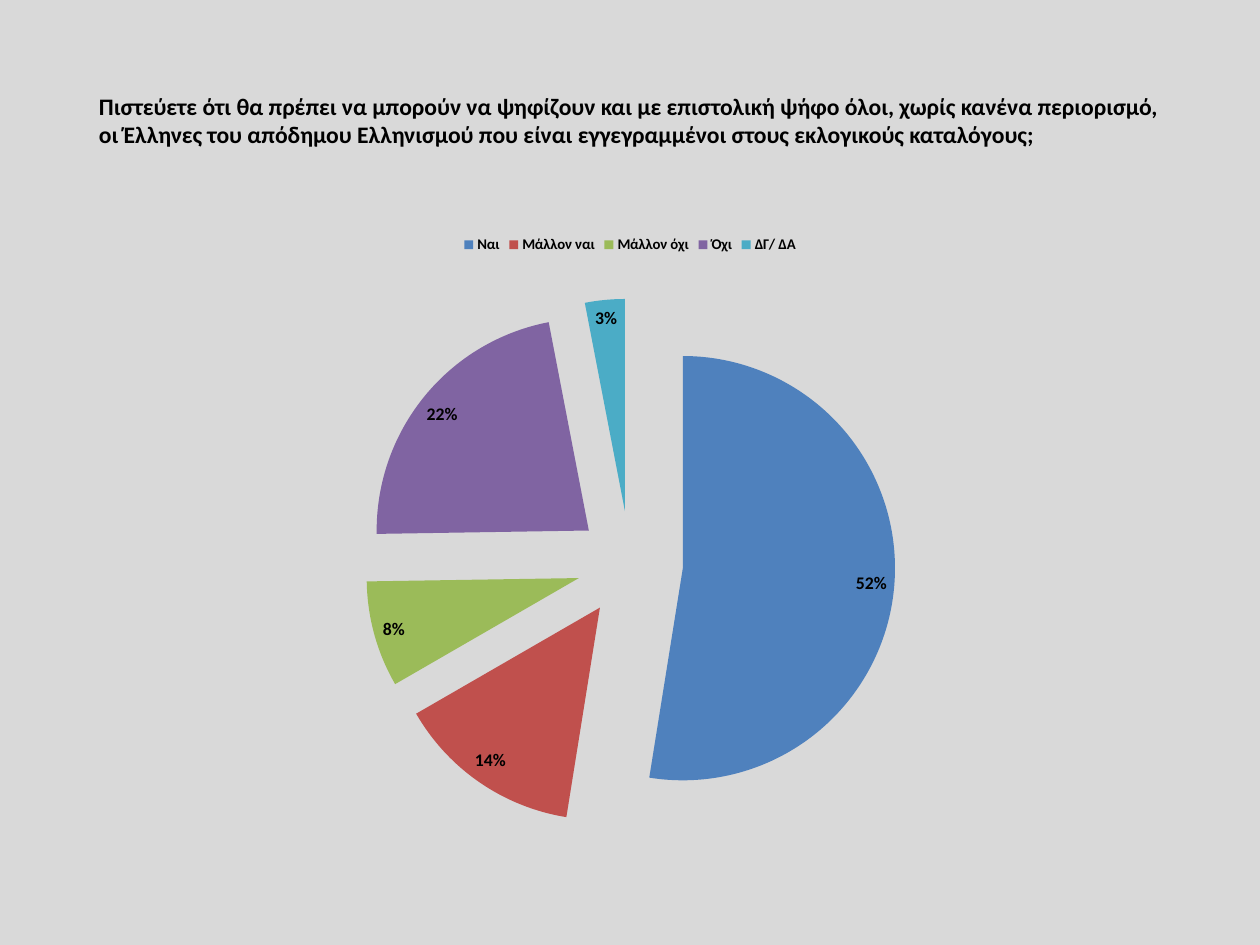
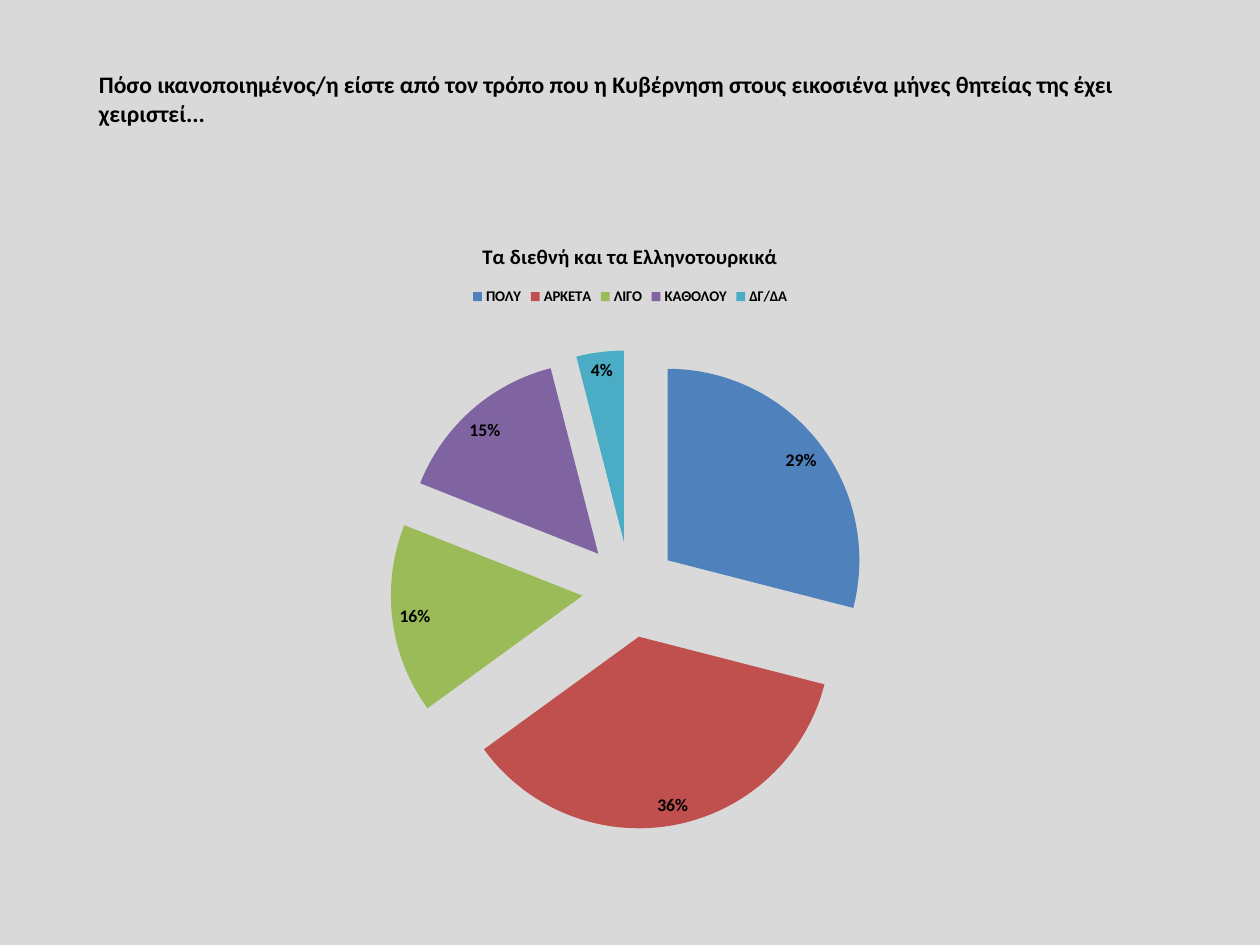
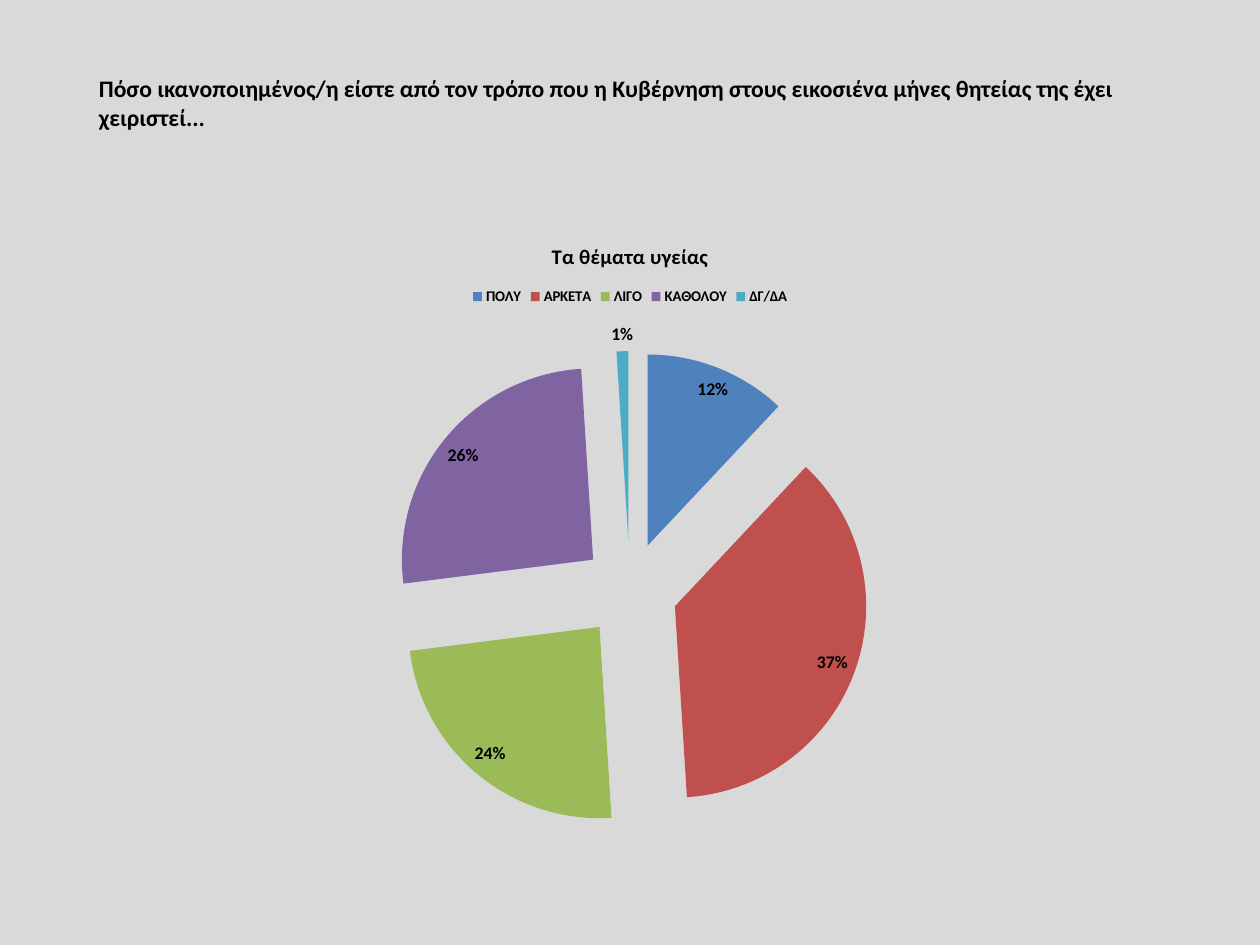
from lxml import etree
from pptx import Presentation
from pptx.chart.data import CategoryChartData
from pptx.dml.color import RGBColor
from pptx.enum.chart import XL_CHART_TYPE, XL_LABEL_POSITION, XL_LEGEND_POSITION
from pptx.enum.text import MSO_ANCHOR
from pptx.oxml.ns import qn
from pptx.util import Inches, Pt

PIE = XL_CHART_TYPE.PIE
BEST_FIT = XL_LABEL_POSITION.BEST_FIT
TOP = XL_LEGEND_POSITION.TOP
MIDDLE = MSO_ANCHOR.MIDDLE

# Shared look
SLIDE_SIZE = (11.84, 8.88)
BACKGROUND = "D9D9D9"
INK = "000000"
FONT = "Calibri"
SLICES = ["4F81BD", "C0504D", "9BBB59", "8064A2", "4BACC6"]
EXPLOSION = 25
QUESTION_INSETS = {
    "margin_left": 0.12, "margin_right": 0.12,
    "margin_top": 0.06, "margin_bottom": 0.06,
}

# Poll content
HANDLING = ("Πόσο ικανοποιημένος/η είστε από τον τρόπο που η Κυβέρνηση στους "
            "εικοσιένα μήνες θητείας της έχει χειριστεί...")
POSTAL_VOTE = ("Πιστεύετε ότι θα πρέπει να μπορούν να ψηφίζουν και με επιστολική "
               "ψήφο όλοι, χωρίς κανένα περιορισμό, οι Έλληνες του απόδημου "
               "Ελληνισμού που είναι εγγεγραμμένοι στους εκλογικούς καταλόγους;")
AGREEMENT = ["Ναι", "Μάλλον ναι", "Μάλλον όχι", "Όχι", "ΔΓ/ ΔΑ"]
SATISFACTION = ["ΠΟΛΥ", "ΑΡΚΕΤΑ", "ΛΙΓΟ", "ΚΑΘΟΛΟΥ", "ΔΓ/ΔΑ"]
QUESTION_LEFT, QUESTION_TOP, QUESTION_WIDTH = 0.81, 0.47, 10.21
CHART_LEFT, CHART_WIDTH, CHART_BOTTOM = 0.59, 10.66, 7.93

POLLS = [
    {"question": POSTAL_VOTE, "question_height": 1.31, "chart_top": 2.11,
     "topic": None, "answers": AGREEMENT, "shares": [52, 14, 8, 22, 3]},
    {"question": HANDLING, "question_height": 0.91, "chart_top": 2.07,
     "topic": "Τα διεθνή και τα Ελληνοτουρκικά",
     "answers": SATISFACTION, "shares": [29, 36, 16, 15, 4]},
    {"question": HANDLING, "question_height": 0.99, "chart_top": 2.07,
     "topic": "Τα θέματα υγείας",
     "answers": SATISFACTION, "shares": [12, 37, 24, 26, 1]},
]


def paint(fill, colour):
    fill.solid()
    fill.fore_color.rgb = RGBColor.from_string(colour)


def style_font(font, size, bold=True):
    for name, value in {"name": FONT, "size": Pt(size), "bold": bold}.items():
        setattr(font, name, value)
    paint(font.fill, INK)


def add_question(page, box, text):
    frame = page.shapes.add_textbox(*map(Inches, box)).text_frame
    frame.word_wrap = True
    frame.vertical_anchor = MIDDLE
    for name, value in QUESTION_INSETS.items():
        setattr(frame, name, Inches(value))
    span = frame.paragraphs[0].add_run()
    span.text = text
    style_font(span.font, 16)


def explode(series):
    explosion = etree.Element(qn("c:explosion"), val=str(EXPLOSION))
    series._element.find(qn("c:tx")).addnext(explosion)


def add_pie(page, box, topic, answers, shares):
    data = CategoryChartData(number_format="0")
    data.categories = answers
    data.add_series(topic or "Series 1", shares)
    chart = page.shapes.add_chart(PIE, *map(Inches, box), data).chart
    style_font(chart.font, 10, bold=False)

    # Heading and legend
    chart.has_title = topic is not None
    if topic:
        chart.chart_title.include_in_layout = False
        span = chart.chart_title.text_frame.paragraphs[0].add_run()
        span.text = topic
        style_font(span.font, 14)
    chart.has_legend = True
    chart.legend.position = TOP
    chart.legend.include_in_layout = False
    style_font(chart.legend.font, 10)

    # Slices
    plot = chart.plots[0]
    plot.vary_by_categories = True
    series = plot.series[0]
    explode(series)
    for index, colour in enumerate(SLICES):
        paint(series.points[index].format.fill, colour)

    # The shares are rounded percentages, shown as they are
    labels = series.data_labels
    label_format = {
        "show_value": True, "show_percentage": False, "position": BEST_FIT,
        "number_format": '0"%"', "number_format_is_linked": False,
    }
    for name, value in label_format.items():
        setattr(labels, name, value)
    style_font(labels.font, 12)


def add_poll_page(deck, poll):
    page = deck.slides.add_slide(deck.slide_layouts[6])
    paint(page.background.fill, BACKGROUND)
    add_question(page, (QUESTION_LEFT, QUESTION_TOP, QUESTION_WIDTH,
                        poll["question_height"]), poll["question"])
    top = poll["chart_top"]
    add_pie(page, (CHART_LEFT, top, CHART_WIDTH, CHART_BOTTOM - top),
            poll["topic"], poll["answers"], poll["shares"])


def main():
    deck = Presentation()
    deck.slide_width, deck.slide_height = map(Inches, SLIDE_SIZE)
    for poll in POLLS:
        add_poll_page(deck, poll)
    deck.save("out.pptx")


if __name__ == "__main__":
    main()
